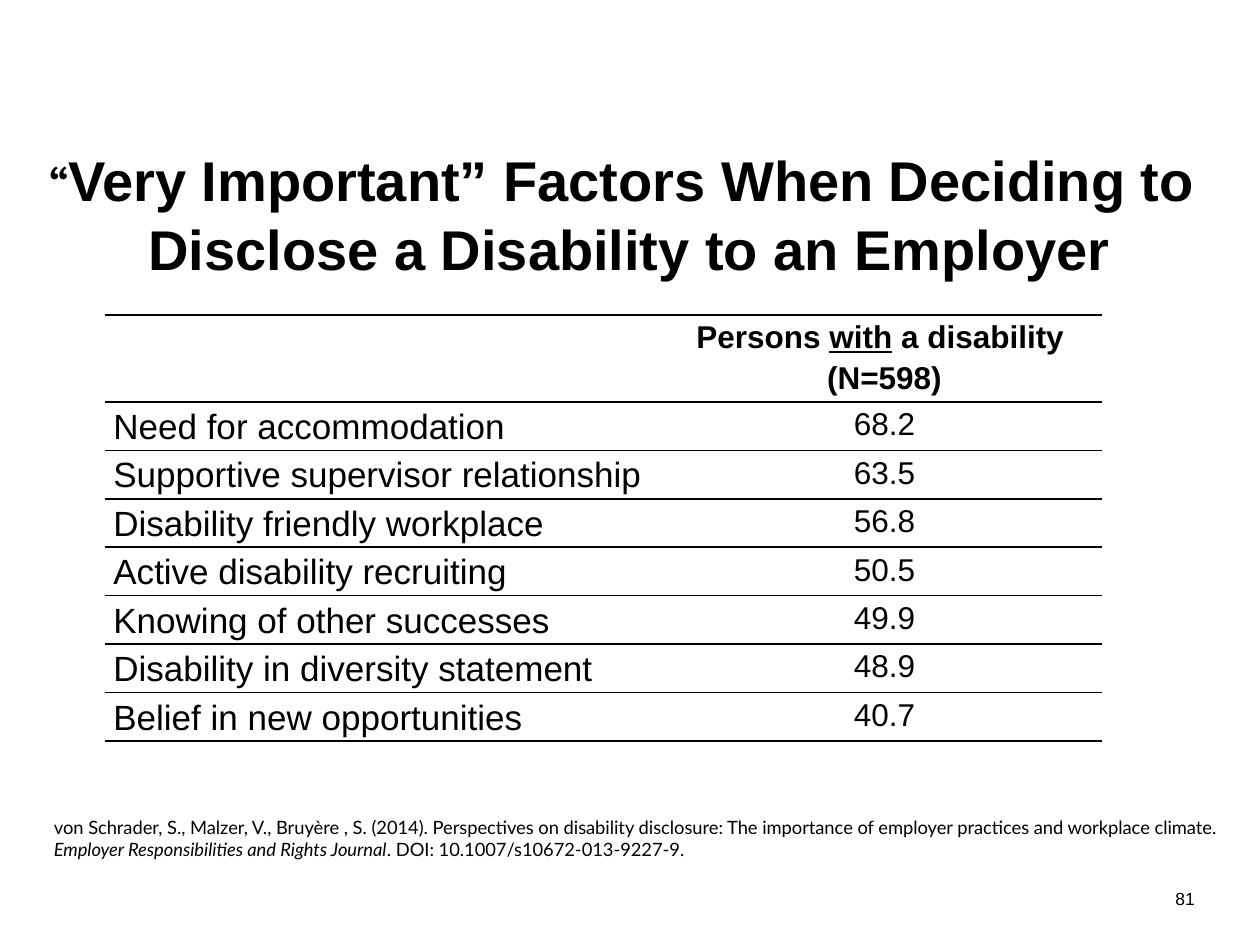
from lxml import etree
from pptx import Presentation
from pptx.dml.color import RGBColor
from pptx.enum.text import PP_ALIGN as Align
from pptx.oxml.ns import qn
from pptx.util import Inches, Pt

INK, PAPER = "000000", "FFFFFF"
WIDTH, HEIGHT = 10, 7.5
HEADER_HEIGHT, TABLE_HEIGHT = 0.69, 3.38
COLUMNS = (4.46, 3.46)
FACTORS = (
    ("Need for accommodation", "68.2"),
    ("Supportive supervisor relationship", "63.5"),
    ("Disability friendly workplace", "56.8"),
    ("Active disability recruiting", "50.5"),
    ("Knowing of other successes", "49.9"),
    ("Disability in diversity statement", "48.9"),
    ("Belief in new opportunities", "40.7"),
)


def color(hex_code):
    return RGBColor.from_string(hex_code)


def add_run(paragraph, text, size, face="Arial", bold=False, italic=False, underline=False):
    run = paragraph.add_run()
    run.text = text
    font = run.font
    font.size, font.name = Pt(size), face
    font.bold, font.italic, font.underline = bold, italic, underline
    font.color.rgb = color(INK)


def add_text_area(slide, left, top, width, height, top_inset=0.05, align=Align.LEFT):
    """Add a wrapping text box and return its first paragraph."""
    box = slide.shapes.add_textbox(*map(Inches, (left, top, width, height)))
    frame = box.text_frame
    frame.word_wrap = True
    frame.margin_top = Inches(top_inset)
    paragraph = frame.paragraphs[0]
    paragraph.alignment = align
    return paragraph


def rule_cell(cell):
    """White cell with black lines above and below and none at the sides."""
    cell.fill.solid()
    cell.fill.fore_color.rgb = color(PAPER)
    properties = cell._tc.get_or_add_tcPr()
    for place, side in enumerate(("lnL", "lnR", "lnT", "lnB")):
        line = etree.Element(qn(f"a:{side}"), w=str(Pt(1)))
        if side in ("lnT", "lnB"):
            fill = etree.SubElement(line, qn("a:solidFill"))
            etree.SubElement(fill, qn("a:srgbClr"), val=INK)
        else:
            etree.SubElement(line, qn("a:noFill"))
        properties.insert(place, line)


def style_cell(cell):
    rule_cell(cell)
    cell.margin_left = cell.margin_right = Inches(0.07)
    cell.margin_top = cell.margin_bottom = 0


def style_paragraph(paragraph, align):
    paragraph.alignment = align
    paragraph.line_spacing = 1.15
    return paragraph


def add_title(slide):
    title = add_text_area(slide, 0, 1.08, WIDTH, 6.08, top_inset=0.07, align=Align.CENTER)
    title.line_spacing = Pt(39)
    add_run(title, "“", 28, "Cambria", bold=True)
    add_run(title, "Very Important” Factors When Deciding to ", 32, bold=True)
    title.add_line_break()
    add_run(title, "Disclose a Disability to an Employer", 32, bold=True)


def add_citation(slide):
    citation = add_text_area(slide, 0.33, 6.25, 9.5, 0.81, top_inset=0.23)
    add_run(citation, "von Schrader, S., Malzer, V., Bruyère , S. (2014). Perspectives on "
            "disability disclosure: The importance of employer practices and "
            "workplace climate. ", 10.5, "Lato")
    add_run(citation, "Employer Responsibilities and Rights Journal", 10.5, "Lato", italic=True)
    add_run(citation, ". DOI: 10.1007/s10672-013-9227-9.", 10.5, "Lato")


def add_factor_table(slide):
    table = slide.shapes.add_table(
        len(FACTORS) + 1, len(COLUMNS), Inches(0.83), Inches(2.5),
        Inches(sum(COLUMNS)), Inches(TABLE_HEIGHT)).table
    table.first_row = table.horz_banding = False
    for column, width in zip(table.columns, COLUMNS):
        column.width = Inches(width)
    factor_height = (TABLE_HEIGHT - HEADER_HEIGHT) / len(FACTORS)
    for index, row in enumerate(table.rows):
        row.height = Inches(factor_height if index else HEADER_HEIGHT)
    for cell in table.iter_cells():
        style_cell(cell)

    header = table.cell(0, 1).text_frame
    group = style_paragraph(header.paragraphs[0], Align.CENTER)
    add_run(group, "Persons ", 18, bold=True)
    add_run(group, "with", 18, bold=True, underline=True)
    add_run(group, " a disability ", 18, bold=True)
    add_run(style_paragraph(header.add_paragraph(), Align.CENTER), "(N=598)", 18, bold=True)

    formats = ((Align.LEFT, 20), (Align.CENTER, 18))
    for row, entries in enumerate(FACTORS, start=1):
        for column, (entry, (align, size)) in enumerate(zip(entries, formats)):
            paragraph = table.cell(row, column).text_frame.paragraphs[0]
            add_run(style_paragraph(paragraph, align), entry, size)


def add_page_number(slide):
    number = add_text_area(slide, 7.5, 7, 2.08, 0.5, align=Align.RIGHT)
    add_run(number, "81", 10)


def main():
    deck = Presentation()
    deck.slide_width, deck.slide_height = Inches(WIDTH), Inches(HEIGHT)
    slide = deck.slides.add_slide(deck.slide_layouts[6])
    add_title(slide)
    add_citation(slide)
    add_factor_table(slide)
    add_page_number(slide)
    deck.save("out.pptx")


if __name__ == "__main__":
    main()
